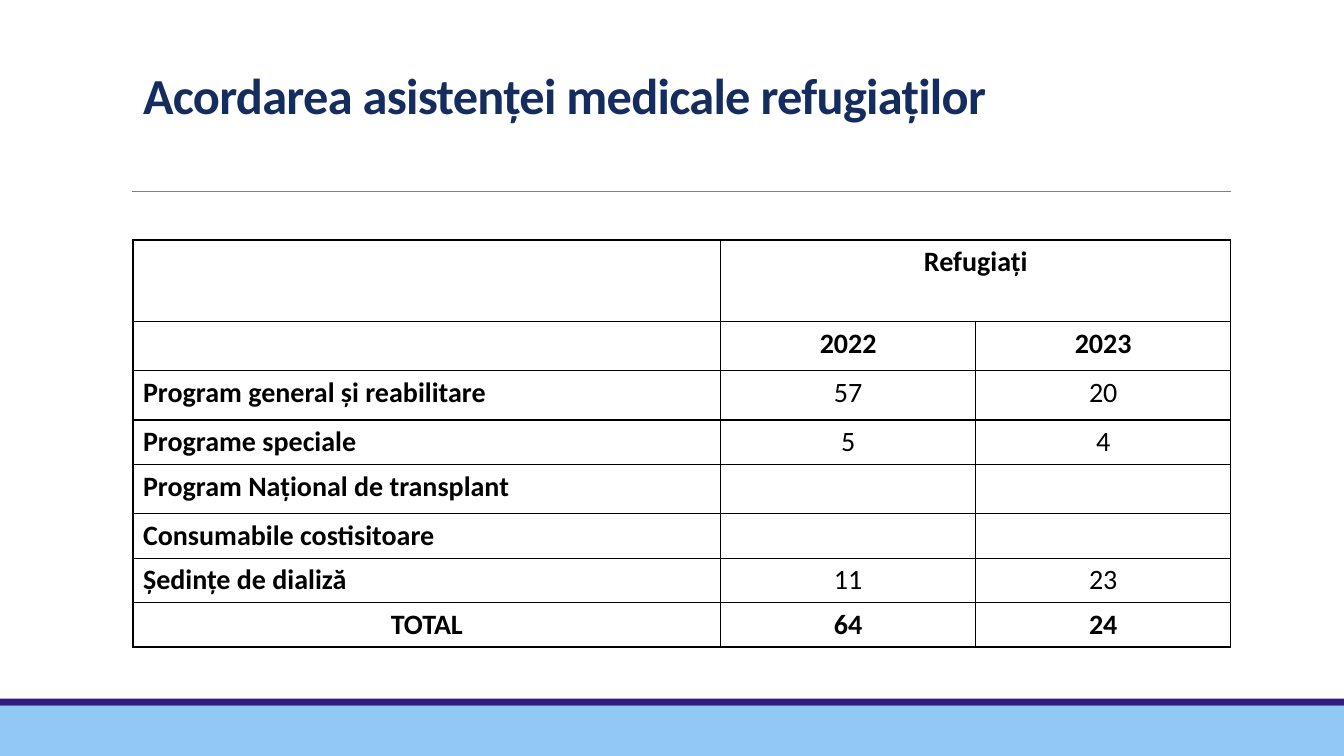
from lxml import etree
from pptx import Presentation
from pptx.dml.color import RGBColor
from pptx.enum.shapes import MSO_CONNECTOR, MSO_SHAPE
from pptx.enum.text import MSO_ANCHOR, MSO_AUTO_SIZE, PP_ALIGN
from pptx.oxml.ns import qn
from pptx.util import Pt

RECTANGLE = MSO_SHAPE.RECTANGLE
STRAIGHT = MSO_CONNECTOR.STRAIGHT
LEFT, CENTER = PP_ALIGN.LEFT, PP_ALIGN.CENTER
BOTTOM = MSO_ANCHOR.BOTTOM
NO_AUTOFIT = MSO_AUTO_SIZE.NONE

PAGE_WIDTH, PAGE_HEIGHT = 960, 540
TITLE_ONLY = 5
COLORS = {
    "white": "FFFFFF",
    "black": "000000",
    "navy": "142C5E",
    "sky": "8FC9F4",
    "violet": "301D7D",
    "gray": "808080",
}
ROWS = [
    ("", "Refugiați", ""),
    ("", "2022", "2023"),
    ("Program general și reabilitare", "57", "20"),
    ("Programe speciale", "5", "4"),
    ("Program Național de transplant", "", ""),
    ("Consumabile costisitoare", "", ""),
    ("Ședințe de dializă", "11", "23"),
    ("TOTAL", "64", "24"),
]
COLUMN_WIDTHS = [419.8, 182.2, 182.2]
ROW_HEIGHTS = [58.3, 35.2, 35.2, 31.7, 35.2, 31.7, 31.7, 31.7]
HEADER_ROWS = 2
TOTAL_ROW = len(ROWS) - 1


class SlideBuilder:
    """Holds the text style and the slide that receives the elements."""

    def __init__(self, page, font="Calibri"):
        self.page = page
        self.font = font

    def color(self, name):
        return RGBColor.from_string(COLORS[name])

    def style(self, para, size, color, bold, align):
        para.alignment = align
        for span in para.runs:
            span.font.name = self.font
            span.font.size = Pt(size)
            span.font.bold = bold
            span.font.color.rgb = self.color(color)

    def title(self, text, left, top, width, height):
        box = self.page.shapes.title
        box.left, box.top, box.width, box.height = map(Pt, (left, top, width, height))
        frame = box.text_frame
        frame.text = text
        frame.word_wrap = True
        frame.auto_size = NO_AUTOFIT
        frame.vertical_anchor = BOTTOM
        para = frame.paragraphs[0]
        para.line_spacing = 0.85
        self.style(para, 36, "navy", True, LEFT)
        para.runs[0].font._element.set("spc", "-50")

    def band(self, top, height, color):
        box = self.page.shapes.add_shape(RECTANGLE, 0, Pt(top), Pt(PAGE_WIDTH), Pt(height))
        box.shadow.inherit = False
        box.fill.solid()
        box.fill.fore_color.rgb = self.color(color)
        box.line.fill.background()

    def rule(self, left, right, y):
        line = self.page.shapes.add_connector(STRAIGHT, Pt(left), Pt(y), Pt(right), Pt(y))
        line.line.color.rgb = self.color("gray")
        line.line.width = Pt(0.5)
        etree.SubElement(line._element.spPr, qn("a:effectLst"))

    def borders(self, cell, width=1):
        properties = cell._tc.get_or_add_tcPr()
        for side in ("a:lnL", "a:lnR", "a:lnT", "a:lnB"):
            line = etree.SubElement(properties, qn(side), w=str(Pt(width)))
            fill = etree.SubElement(line, qn("a:solidFill"))
            etree.SubElement(fill, qn("a:srgbClr"), val=COLORS["black"])

    def table(self, left, top):
        frame = self.page.shapes.add_table(
            len(ROWS), len(COLUMN_WIDTHS), Pt(left), Pt(top),
            Pt(sum(COLUMN_WIDTHS)), Pt(sum(ROW_HEIGHTS)))
        table = frame.table
        table.first_row = table.horz_banding = False
        for column, width in zip(table.columns, COLUMN_WIDTHS):
            column.width = Pt(width)
        for row, height in zip(table.rows, ROW_HEIGHTS):
            row.height = Pt(height)
        table.cell(0, 1).merge(table.cell(0, 2))
        for i, values in enumerate(ROWS):
            emphasized = i < HEADER_ROWS or i == TOTAL_ROW
            for j, value in enumerate(values):
                cell = table.cell(i, j)
                self.borders(cell)
                cell.fill.solid()
                cell.fill.fore_color.rgb = self.color("white")
                if value:
                    cell.text_frame.text = value
                    align = CENTER if emphasized or j else LEFT
                    self.style(cell.text_frame.paragraphs[0], 20, "black",
                               emphasized or j == 0, align)


def main():
    deck = Presentation()
    deck.slide_width, deck.slide_height = Pt(PAGE_WIDTH), Pt(PAGE_HEIGHT)
    builder = SlideBuilder(deck.slides.add_slide(deck.slide_layouts[TITLE_ONLY]))
    builder.band(504, 36, "sky")
    builder.band(499, 5, "violet")
    builder.rule(94.3, 879, 136.6)
    builder.title("Acordarea asistenței medicale refugiaților", 95, 23, 792, 70)
    builder.table(95, 171.4)
    deck.save("out.pptx")


if __name__ == "__main__":
    main()
